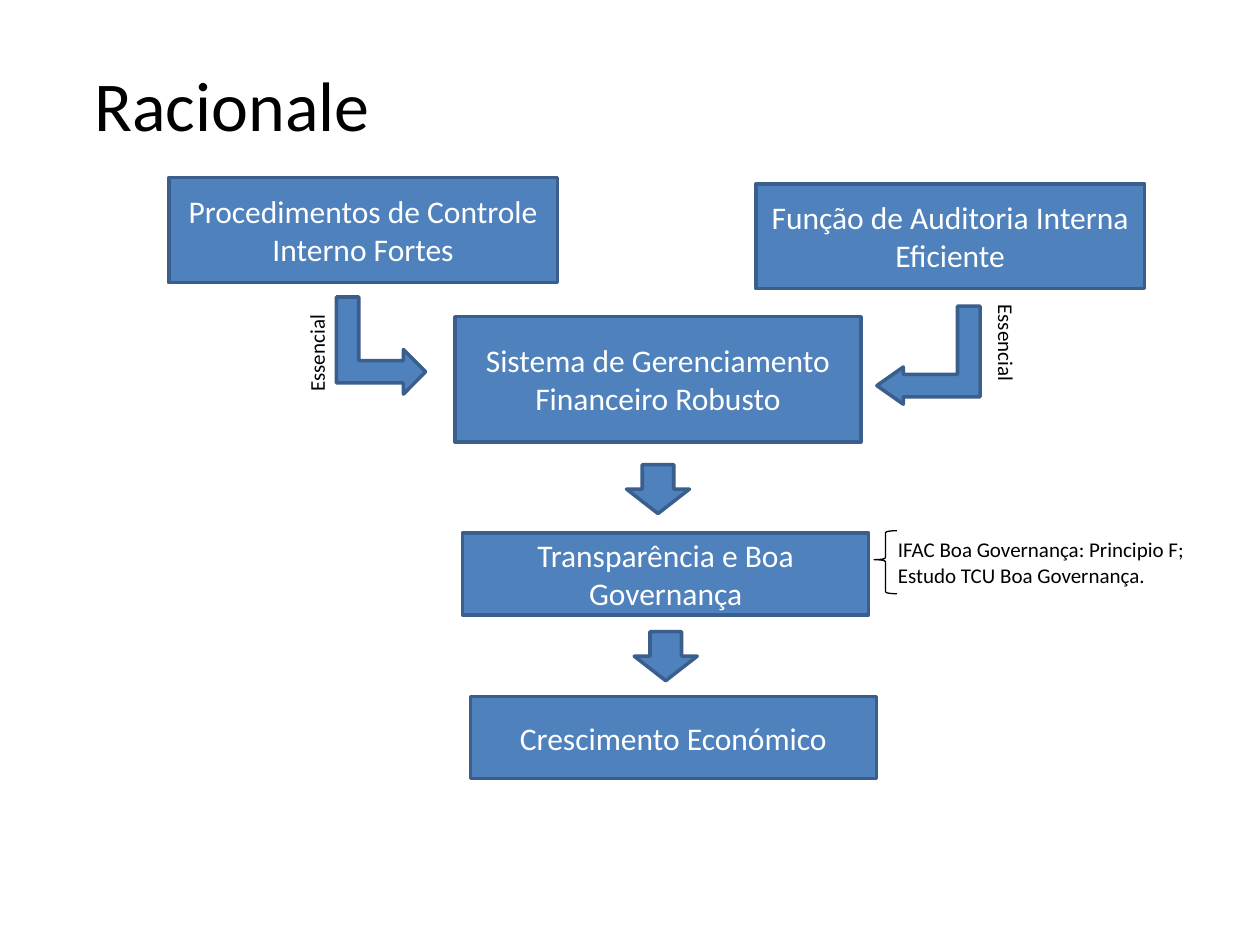
from pptx import Presentation
from pptx.dml.color import RGBColor
from pptx.enum import shapes, text
from pptx.oxml.ns import qn
from pptx.util import Pt

COLORS = {"fill": "4F81BD", "border": "3A5F8C", "light": "FFFFFF", "dark": "000000"}
KINDS = shapes.MSO_SHAPE


class Diagram:
    font = "Calibri"
    border = 2
    box_size = 18
    label_size = 12
    title_size = 40

    def __init__(self, slide):
        self.slide = slide

    def color(self, name):
        return RGBColor.from_string(COLORS[name])

    def set_text(self, frame, lines, size, color, align=text.PP_ALIGN.LEFT):
        frame.word_wrap = True
        frame.text = "\n".join(lines)
        for paragraph in frame.paragraphs:
            paragraph.alignment = align
            paragraph.font.name = self.font
            paragraph.font.size = Pt(size)
            paragraph.font.color.rgb = self.color(color)

    def title(self, wording, *place):
        heading = self.slide.shapes.title
        heading.left, heading.top, heading.width, heading.height = map(Pt, place)
        heading.text_frame.vertical_anchor = text.MSO_ANCHOR.TOP
        self.set_text(heading.text_frame, [wording], self.title_size, "dark")

    def shape(self, kind, *place, rotation=0, adjust=()):
        item = self.slide.shapes.add_shape(kind, *map(Pt, place))
        item.shadow.inherit = False
        item.rotation = rotation
        for index, value in enumerate(adjust):
            item.adjustments[index] = value
        item.fill.solid()
        item.fill.fore_color.rgb = self.color("fill")
        item.line.color.rgb = self.color("border")
        item.line.width = Pt(self.border)
        return item

    def box(self, wording, *place):
        frame = self.shape(KINDS.RECTANGLE, *place).text_frame
        frame.vertical_anchor = text.MSO_ANCHOR.MIDDLE
        self.set_text(frame, [wording], self.box_size, "light", text.PP_ALIGN.CENTER)

    def bent_arrow(self, *place, rotation, flipped=False, adjust=()):
        arrow = self.shape(KINDS.BENT_UP_ARROW, *place, rotation=rotation, adjust=adjust)
        if flipped:
            arrow._element.spPr.find(qn("a:xfrm")).set("flipH", "1")

    def down_arrow(self, center, top):
        """Draw a right arrow turned downwards, centred at the given x."""
        length, breadth = 28, 36
        self.shape(KINDS.RIGHT_ARROW, center - length / 2, top, length, breadth, rotation=90)

    def brace(self, *place, adjust):
        brace = self.shape(KINDS.LEFT_BRACE, *place, adjust=adjust)
        brace.fill.background()
        brace.line.color.rgb = self.color("dark")
        brace.line.width = Pt(0.75)

    def label(self, lines, *place, rotation=0):
        label = self.slide.shapes.add_textbox(*map(Pt, place))
        label.rotation = rotation
        self.set_text(label.text_frame, lines, self.label_size, "dark")


def main():
    deck = Presentation()
    deck.slide_width, deck.slide_height = Pt(720), Pt(540)
    diagram = Diagram(deck.slides.add_slide(deck.slide_layouts[5]))

    diagram.title("Racionale", 46.8, 31.7, 633, 55.5)

    diagram.box("Procedimentos de Controle Interno Fortes", 96.5, 101.5, 222, 60)
    diagram.box("Função de Auditoria Interna Eficiente", 432, 105, 222, 60)
    diagram.bent_arrow(190, 172, 55.5, 51, rotation=90)
    diagram.bent_arrow(502.5, 173.5, 56, 59, rotation=270, flipped=True,
                       adjust=(0.23, 0.19, 0.27))
    diagram.label(["Essencial"], 142.5, 181.5, 77, 21.8, rotation=270)
    diagram.label(["Essencial"], 536.5, 194.5, 77, 21.8, rotation=90)

    stages = [
        ("Sistema de Gerenciamento Financeiro Robusto", 181, 71.5, 261.5),
        ("Transparência e Boa Governança", 304.5, 47, 357),
        ("Crescimento Económico", 398, 47, None),
    ]
    stage_width = 232
    for index, (wording, top, height, arrow_top) in enumerate(stages):
        left = 260 + 4.4 * index
        diagram.box(wording, left, top, stage_width, height)
        if arrow_top is not None:
            diagram.down_arrow(left + stage_width / 2, arrow_top)

    diagram.brace(499.5, 303.3, 13, 36, adjust=(0.08, 0.46))
    diagram.label(["IFAC Boa Governança: Principio F;", "Estudo TCU Boa Governança."],
                  506, 303.3, 214, 36)

    deck.save("out.pptx")


if __name__ == "__main__":
    main()
